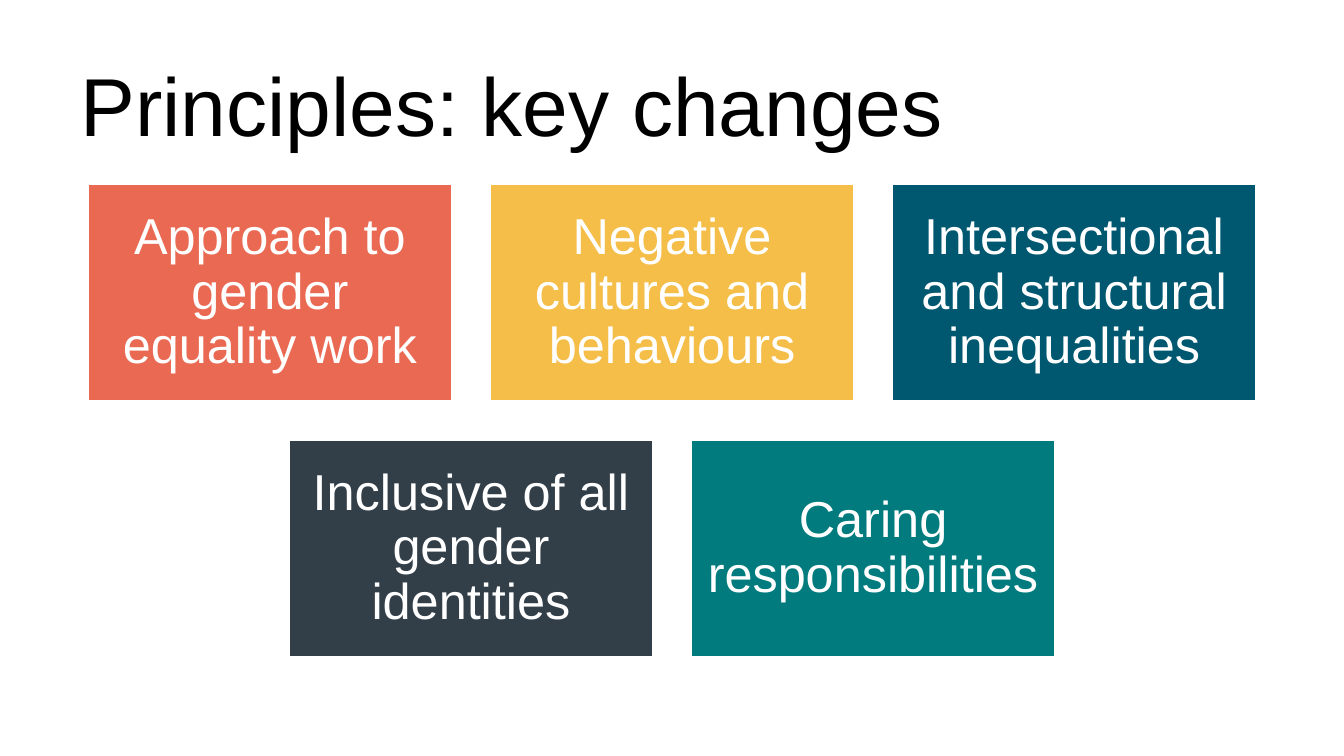
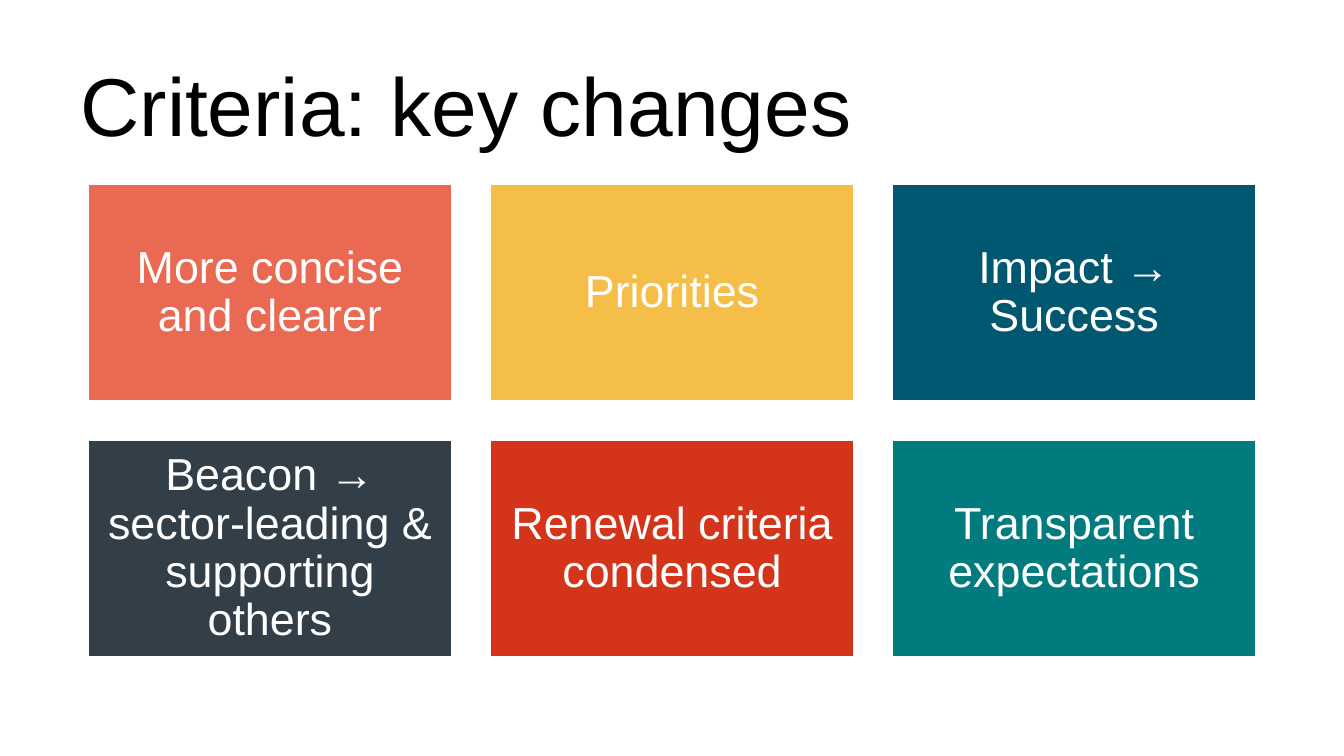
from dataclasses import dataclass

from pptx import Presentation
from pptx.dml.color import RGBColor
from pptx.enum.shapes import MSO_SHAPE
from pptx.enum.text import MSO_ANCHOR, PP_ALIGN
from pptx.slide import Slide
from pptx.text.text import TextFrame
from pptx.util import Inches, Pt

RECT = MSO_SHAPE.RECTANGLE
MIDDLE = MSO_ANCHOR.MIDDLE
LEFT, CENTER = PP_ALIGN.LEFT, PP_ALIGN.CENTER

FONT = "Arial"
COLORS = {
    "black": "000000",
    "white": "FFFFFF",
    "coral": "EA6953",
    "gold": "F4BE49",
    "blue": "005870",
    "slate": "323E48",
    "red": "D4351A",
    "teal": "017B7D",
}

SLIDE_W = 10
SLIDE_H = SLIDE_W * 9 / 16
CARD_W = 2.72
CARD_H = CARD_W * 0.6
GAP = CARD_W / 10
GRID_X, GRID_Y = SLIDE_W / 2, 3.13  # centre of the card grid


@dataclass(frozen=True)
class Card:
    text: str
    color: str


@dataclass(frozen=True)
class Page:
    title: str
    size: int
    inset: float
    rows: list[list[Card]]


PAGES = [
    Page("Principles: key changes", 27, 0.11, [
        [
            Card("Approach to gender equality work", "coral"),
            Card("Negative cultures and behaviours", "gold"),
            Card("Intersectional and structural inequalities", "blue"),
        ],
        [
            Card("Inclusive of all gender identities", "slate"),
            Card("Caring responsibilities", "teal"),
        ],
    ]),
    Page("Criteria: key changes", 24, 0.1, [
        [
            Card("More concise and clearer", "coral"),
            Card("Priorities", "gold"),
            Card("Impact → Success", "blue"),
        ],
        [
            Card("Beacon → sector-leading & supporting others", "slate"),
            Card("Renewal criteria condensed", "red"),
            Card("Transparent expectations", "teal"),
        ],
    ]),
]


def color(name: str) -> RGBColor:
    return RGBColor.from_string(COLORS[name])


def write(frame: TextFrame, text: str, size: int, ink: str,
          align: PP_ALIGN, spacing: float) -> None:
    frame.text = text
    frame.word_wrap = True
    frame.vertical_anchor = MIDDLE
    para = frame.paragraphs[0]
    para.alignment = align
    para.line_spacing = spacing
    font = para.runs[0].font
    font.name = FONT
    font.size = Pt(size)
    font.color.rgb = color(ink)


def draw_title(slide: Slide, text: str) -> None:
    box = slide.shapes.add_textbox(
        Inches(0.5), Inches(0.3), Inches(9), Inches(0.94))
    write(box.text_frame, text, 44, "black", LEFT, 1.0)


def draw_card(slide: Slide, card: Card, left: float, top: float,
              page: Page) -> None:
    shape = slide.shapes.add_shape(
        RECT, Inches(left), Inches(top), Inches(CARD_W), Inches(CARD_H))
    shape.shadow.inherit = False
    shape.fill.solid()
    shape.fill.fore_color.rgb = color(card.color)
    shape.line.color.rgb = color("white")
    shape.line.width = Pt(2)
    frame = shape.text_frame
    frame.margin_left = frame.margin_right = Inches(page.inset)
    frame.margin_top = frame.margin_bottom = Inches(page.inset)
    write(frame, card.text, page.size, "white", CENTER, 0.9)


def first(center: float, count: int, size: float) -> float:
    """Start of a run of equal items with gaps, centred on a point."""
    return center - (count * (size + GAP) - GAP) / 2


def draw_rows(slide: Slide, page: Page) -> None:
    top = first(GRID_Y, len(page.rows), CARD_H)
    for row in page.rows:
        left = first(GRID_X, len(row), CARD_W)
        for card in row:
            draw_card(slide, card, left, top, page)
            left += CARD_W + GAP
        top += CARD_H + GAP


def main() -> None:
    deck = Presentation()
    deck.slide_width = Inches(SLIDE_W)
    deck.slide_height = Inches(SLIDE_H)
    blank = deck.slide_layouts[6]
    for page in PAGES:
        slide = deck.slides.add_slide(blank)
        draw_title(slide, page.title)
        draw_rows(slide, page)
    deck.save("out.pptx")


if __name__ == "__main__":
    main()
